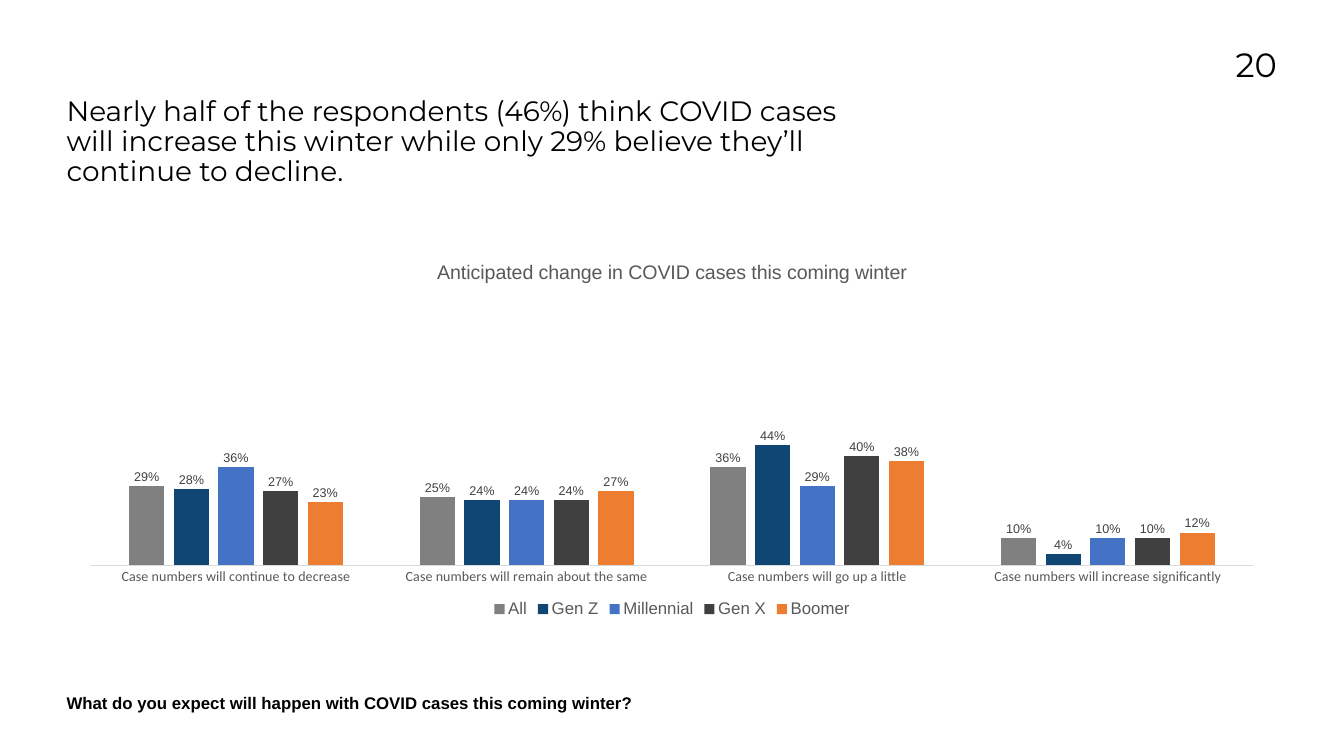
from lxml import etree
from pptx import Presentation
from pptx import util as u
from pptx.chart.data import CategoryChartData
from pptx.dml.color import RGBColor
from pptx.enum import chart as ch, text
from pptx.oxml import ns

ANSWERS = [
    "Case numbers will continue to decrease",
    "Case numbers will remain about the same",
    "Case numbers will go up a little",
    "Case numbers will increase significantly",
]
GENERATIONS = [
    ("All", "808080", (0.29, 0.25, 0.36, 0.10)),
    ("Gen Z", "104674", (0.28, 0.24, 0.44, 0.04)),
    ("Millennial", "4472C4", (0.36, 0.24, 0.29, 0.10)),
    ("Gen X", "404040", (0.27, 0.24, 0.40, 0.10)),
    ("Boomer", "ED7D31", (0.23, 0.27, 0.38, 0.12)),
]
LEFT = 1.32
GREY = "595959"


def color(hex_text):
    return RGBColor.from_string(hex_text)


def style_font(font, size, name, hex_text, bold=False):
    font.size = u.Pt(size)
    font.name = name
    font.bold = bold
    font.color.rgb = color(hex_text)


def place(shape, left, top, width, height):
    shape.left, shape.top = u.Inches(left), u.Inches(top)
    shape.width, shape.height = u.Inches(width), u.Inches(height)


def write(shape, words, size, font="Montserrat", bold=False,
          align=text.PP_ALIGN.LEFT, spacing=1.0):
    frame = shape.text_frame
    frame.word_wrap = True
    frame.auto_size = text.MSO_AUTO_SIZE.NONE
    frame.vertical_anchor = text.MSO_ANCHOR.TOP
    frame.margin_left = frame.margin_right = 0
    frame.margin_top = frame.margin_bottom = 0
    para = frame.paragraphs[0]
    para.alignment = align
    para.line_spacing = spacing
    para.space_before = u.Pt(0)
    span = para.add_run()
    span.text = words
    style_font(span.font, size, font, "000000", bold)


def remove_bullet(para):
    properties = para._p.get_or_add_pPr()
    properties.set("marL", "0")
    properties.set("indent", "0")
    etree.SubElement(properties, ns.qn("a:buNone"))


def set_plot_layout(chart, **fractions):
    """Fix the inner plot area, as fractions of the chart frame."""
    area = chart.element.chart.plotArea
    for old in area.findall(ns.qn("c:layout")):
        area.remove(old)
    layout = etree.Element(ns.qn("c:layout"))
    manual = etree.SubElement(layout, ns.qn("c:manualLayout"))
    settings = {"layoutTarget": "inner", "xMode": "edge", "yMode": "edge", **fractions}
    for tag, value in settings.items():
        etree.SubElement(manual, ns.qn("c:" + tag)).set("val", str(value))
    area.insert(0, layout)


def style_axes(chart):
    answers = chart.category_axis
    answers.major_tick_mark = ch.XL_TICK_MARK.NONE
    answers.format.line.color.rgb = color("D9D9D9")
    answers.format.line.width = u.Pt(0.75)
    style_font(answers.tick_labels.font, 20, "Calibri", GREY)
    share = chart.value_axis
    share.minimum_scale, share.maximum_scale = 0, 1
    share.has_major_gridlines = False
    share.visible = False


def style_series(series, fill):
    series.format.fill.solid()
    series.format.fill.fore_color.rgb = color(fill)
    labels = series.data_labels
    labels.show_value = True
    labels.number_format = "0%"
    labels.number_format_is_linked = False
    labels.position = ch.XL_LABEL_POSITION.OUTSIDE_END
    style_font(labels.font, 18, "Arial", "404040")


def add_column_chart(page, title):
    data = CategoryChartData(number_format="0%")
    data.categories = ANSWERS
    for name, _, shares in GENERATIONS:
        data.add_series(name, shares)
    frame = page.shapes.add_chart(
        ch.XL_CHART_TYPE.COLUMN_CLUSTERED,
        u.Inches(LEFT), u.Inches(4.88), u.Inches(24.03), u.Inches(7.46), data)
    chart = frame.chart
    style_font(chart.font, 10, "Calibri", "000000")

    chart.has_title = True
    heading = chart.chart_title.text_frame
    heading.text = title
    style_font(heading.paragraphs[0].runs[0].font, 28, "Arial", GREY)

    chart.has_legend = True
    chart.legend.position = ch.XL_LEGEND_POSITION.BOTTOM
    chart.legend.include_in_layout = False
    style_font(chart.legend.font, 24, "Arial", GREY)

    plot = chart.plots[0]
    plot.vary_by_categories = False
    plot.gap_width, plot.overlap = 219, -27
    for series, (_, fill, _) in zip(plot.series, GENERATIONS):
        style_series(series, fill)
    style_axes(chart)
    set_plot_layout(chart, x=0.02, y=0.12, w=0.96, h=0.73)


def main():
    deck = Presentation()
    deck.slide_width, deck.slide_height = u.Inches(26.67), u.Inches(15)
    page = deck.slides.add_slide(deck.slide_layouts[1])

    number = page.shapes.add_textbox(0, 0, 0, 0)
    place(number, 23.09, 0.88, 2.25, 1.64)
    write(number, "20", 48, align=text.PP_ALIGN.RIGHT)

    add_column_chart(page, "Anticipated change in COVID cases this coming winter")

    headline = page.shapes.title
    place(headline, LEFT, 1.93, 16.01, 2.08)
    write(headline, "Nearly half of the respondents (46%) think COVID cases will increase "
          "this winter while only 29% believe they’ll continue to decline.",
          40, spacing=0.9)

    question = page.placeholders[1]
    place(question, LEFT, 13.55, 13.27, 0.65)
    remove_bullet(question.text_frame.paragraphs[0])
    write(question, "What do you expect will happen with COVID cases this coming winter?",
          24, font="Arial", bold=True, spacing=1.5)

    deck.save("out.pptx")


if __name__ == "__main__":
    main()
